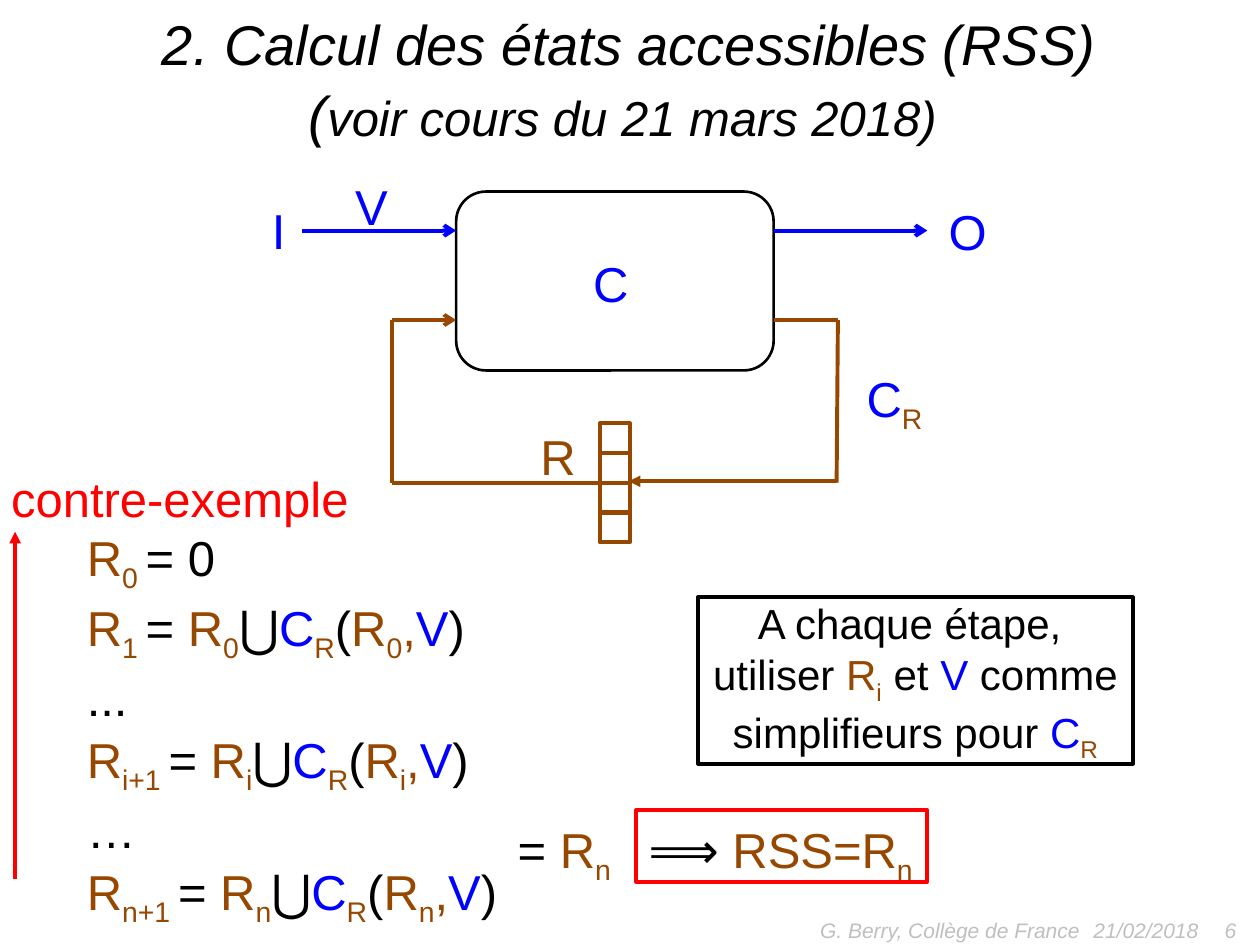
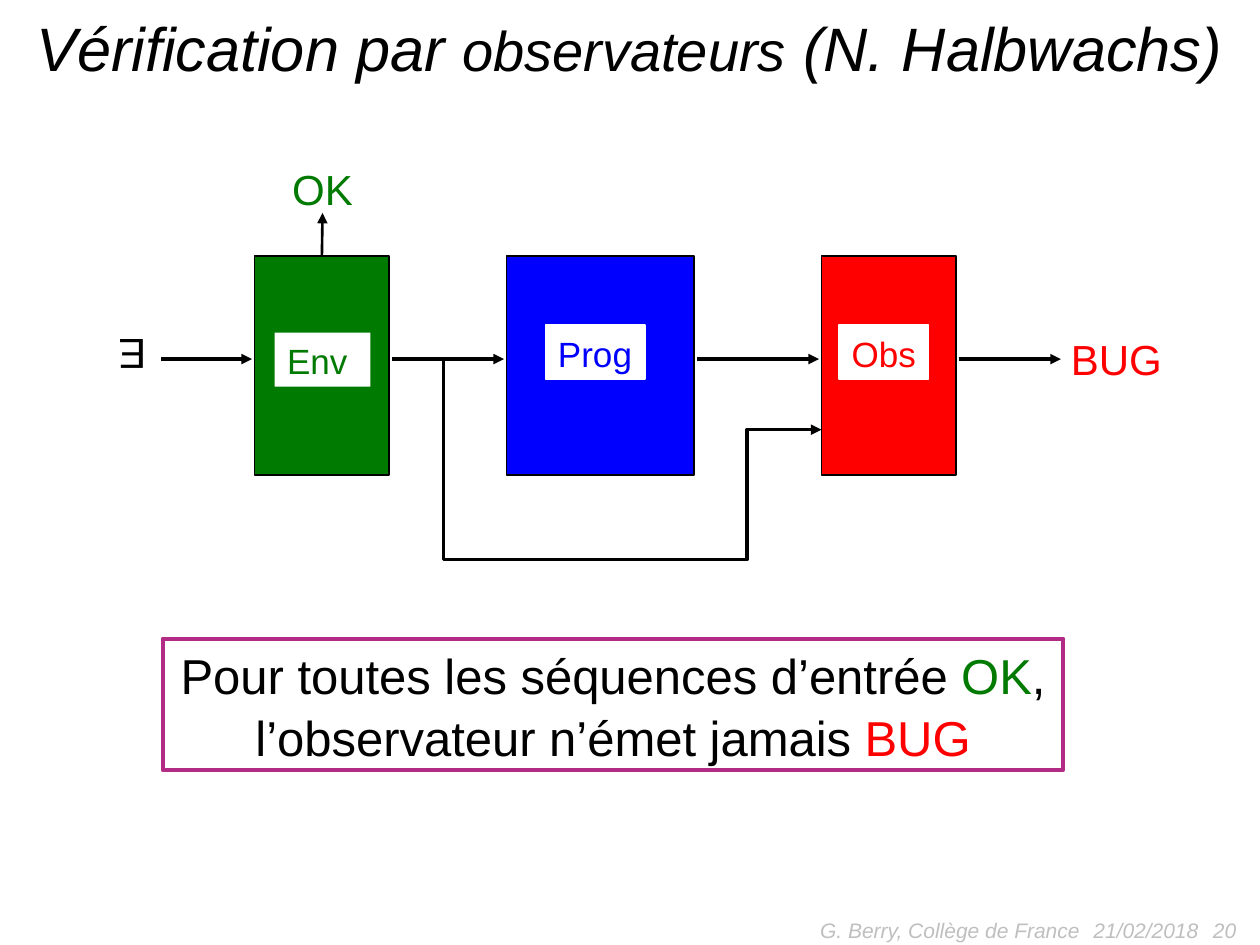
from dataclasses import dataclass
from typing import Any

from pptx import Presentation
from pptx.dml.color import RGBColor
from pptx.enum.shapes import MSO_CONNECTOR, MSO_SHAPE
from pptx.enum.text import MSO_ANCHOR, MSO_AUTO_SIZE, PP_ALIGN
from pptx.oxml.ns import qn
from pptx.util import Inches, Pt
from lxml.etree import SubElement

BLACK = RGBColor(0x00, 0x00, 0x00)
WHITE = RGBColor(0xFF, 0xFF, 0xFF)
GRAY = RGBColor(0xBF, 0xBF, 0xBF)
BROWN = RGBColor(0x96, 0x47, 0x00)
BLUE = RGBColor(0x00, 0x00, 0xFF)
RED = RGBColor(0xFF, 0x00, 0x00)
GREEN = RGBColor(0x00, 0x7A, 0x00)
PURPLE = RGBColor(0xB2, 0x2C, 0x85)
FONT = "Arial"
LINE_SPACING = 1.05


def write_lines(frame, lines, size, align=PP_ALIGN.LEFT, spacing=LINE_SPACING, italic=False):
    for index, spans in enumerate(lines):
        para = frame.paragraphs[0] if index == 0 else frame.add_paragraph()
        para.alignment = align
        para.line_spacing = spacing
        para.font.name = FONT
        para.font.size = Pt(size)
        para.font.italic = italic
        colours = {colour for _, colour, *_ in spans}
        if len(colours) == 1:
            para.font.color.rgb = spans[0][1]
        for text, colour, *subscript in spans:
            span = para.add_run()
            span.text = text
            if len(colours) > 1:
                span.font.color.rgb = colour
            if subscript:
                span._r.get_or_add_rPr().set("baseline", "-25000")


def style_line(shape, colour, width, head=None):
    shape.line.color.rgb = colour
    shape.line.width = Pt(width)
    if head:
        outline = shape._element.spPr.find(qn("a:ln"))
        SubElement(outline, qn("a:tailEnd"), type=head)


@dataclass
class Region:
    shapes: Any
    left: float = 0
    top: float = 0

    def point(self, x, y):
        return Inches(self.left + x), Inches(self.top + y)

    def text(self, x, y, width, height, lines, size, **style):
        box = self.shapes.add_textbox(*self.point(x, y), Inches(width), Inches(height))
        box.text_frame.word_wrap = False
        write_lines(box.text_frame, lines, size, **style)
        return box

    def box(self, x, y, width, height, fill=None, line=None, weight=1.0,
            kind=MSO_SHAPE.RECTANGLE):
        box = self.shapes.add_shape(kind, *self.point(x, y), Inches(width), Inches(height))
        box.shadow.inherit = False
        if fill is None:
            box.fill.background()
        else:
            box.fill.solid()
            box.fill.fore_color.rgb = fill
        if line is None:
            box.line.fill.background()
        else:
            style_line(box, line, weight)
        box.text_frame.word_wrap = False
        return box

    def line(self, start, end, colour, width=2.25, head=None):
        line = self.shapes.add_connector(
            MSO_CONNECTOR.STRAIGHT, *self.point(*start), *self.point(*end))
        style_line(line, colour, width, head)
        SubElement(line._element.spPr, qn("a:effectLst"))
        return line


def add_page(deck, number, title_height):
    page = deck.slides.add_slide(deck.slide_layouts[5])
    title = page.shapes.title
    title.left, title.top = Inches(0.12), Inches(0)
    title.width, title.height = Inches(9.75), Inches(title_height)
    title.text_frame.vertical_anchor = MSO_ANCHOR.TOP
    title.text_frame.auto_size = MSO_AUTO_SIZE.NONE
    add_footer(Region(page.shapes, 5.5, 7.18), number)
    return page


def add_footer(region, number):
    for x, width, text, align in [
        (3.08, 2.33, "21/02/2018", PP_ALIGN.LEFT),
        (2.08, 2.33, number, PP_ALIGN.RIGHT),
        (0, 3.17, "G. Berry, Collège de France", PP_ALIGN.RIGHT),
    ]:
        box = region.text(x, 0, width, 0.4, [[(text, GRAY)]], 12,
                          align=align, spacing=1.0, italic=True)
        box.text_frame.word_wrap = True
        box.text_frame.vertical_anchor = MSO_ANCHOR.MIDDLE


def write_title(page, lines):
    para = page.shapes.title.text_frame.paragraphs[0]
    para.alignment = PP_ALIGN.CENTER
    para.line_spacing = LINE_SPACING
    para.font.name = FONT
    para.font.italic = True
    para.font.color.rgb = BLACK
    for index, spans in enumerate(lines):
        if index:
            para.add_line_break()
        for text, size in spans:
            span = para.add_run()
            span.text = text
            span.font.size = Pt(size)


def state(index):
    return [("R", BROWN), (index, BROWN, True)]


def transition():
    return [("C", BLUE), ("R", BROWN, True)]


def iteration(target, source):
    return [*state(target + " "), ("= ", BLACK), *state(source), ("⋃", BLACK),
            *transition(), ("(", BLACK), *state(source), (",", BROWN),
            ("V", BLUE), (")", BLACK)]


def add_circuit(region):
    cell = 0.24
    for row in range(4):
        region.box(2.76, 2.36 + row * 0.235, cell, cell, line=BROWN, weight=2.25)
    region.box(1.62, 0.52, 2.52, 1.42, line=BLACK, weight=1.5,
               kind=MSO_SHAPE.ROUNDED_RECTANGLE)
    for start, end, colour, head in [
        ((2.76, 2.83), (1.11, 2.83), BROWN, None),
        ((1.11, 1.54), (1.11, 2.83), BROWN, None),
        ((4.65, 1.54), (4.64, 2.83), BROWN, None),
        ((1.11, 1.54), (1.62, 1.54), BROWN, "arrow"),
        ((4.65, 1.54), (4.14, 1.54), BROWN, None),
        ((0.4, 0.83), (1.62, 0.83), BLUE, "arrow"),
        ((4.14, 0.83), (5.36, 0.83), BLUE, "arrow"),
        ((4.64, 2.82), (2.99, 2.82), BROWN, "triangle"),
    ]:
        region.line(start, end, colour, head=head)
    for x, y, width, spans in [
        (2.61, 0.94, 0.48, [("C", BLUE)]),
        (0.06, 0.52, 0.31, [("I", BLUE)]),
        (5.43, 0.53, 0.51, [("O", BLUE)]),
        (4.78, 1.85, 0.68, transition()),
        (2.19, 2.31, 0.49, [("R", BROWN)]),
        (0.72, 0.33, 0.46, [("V", BLUE)]),
    ]:
        region.text(x, y, width, 0.57, [spans], 28)


def add_iterations(region):
    region.text(0.6, 0.46, 3.61, 2.93, [
        [*state("0 "), ("= 0", BLACK)],
        iteration("1", "0"),
        [("...", BLACK)],
        iteration("i+1", "i"),
        [("…", BLACK)],
        iteration("n+1", "n"),
    ], 28)
    region.text(4.02, 2.78, 1.04, 0.57, [[("= ", BLACK), *state("n")]], 28)
    result = region.box(5.06, 2.78, 2.31, 0.57, line=RED, weight=2.25)
    result.text_frame.vertical_anchor = MSO_ANCHOR.TOP
    write_lines(result.text_frame,
                [[("⟹", BLACK), (" RSS=", BROWN), *state("n")]], 28)
    region.line((0.13, 3.33), (0.13, 0.57), RED, head="triangle")
    region.text(0, 0, 2.92, 0.57, [[("contre-exemple", RED)]], 28)


def add_advice(region):
    box = region.box(0, 0, 3.45, 1.32, line=BLACK, weight=2.25)
    write_lines(box.text_frame, [
        [("A chaque étape, ", BLACK)],
        [("utiliser ", BLACK), *state("i"), (" et ", BLACK), ("V", BLUE),
         (" comme", BLACK)],
        [("simplifieurs pour ", BLACK), *transition()],
    ], 24, align=PP_ALIGN.CENTER, spacing=1.01)


def add_reachability_page(deck):
    page = add_page(deck, "6", 1.18)
    write_title(page, [[("2. Calcul des états accessibles (RSS)", 32)],
                       [("(", 32), ("voir cours du 21 mars 2018) ", 28)]])
    add_advice(Region(page.shapes, 5.54, 4.74))
    add_iterations(Region(page.shapes, -0.01, 3.65))
    add_circuit(Region(page.shapes.add_group_shape().shapes, 2, 1))


def add_observer_chain(region):
    blocks = [
        region.box(x, 0.8, width, 1.74, fill=fill, line=BLACK)
        for x, width, fill in [(1.18, 1.07, GREEN), (3.18, 1.49, BLUE), (5.68, 1.07, RED)]
    ]
    for start, end in [(0.44, 1.16), (2.27, 3.16), (4.69, 5.66), (6.77, 7.58)]:
        region.line((start, 1.62), (end, 1.62), BLACK, 2, "triangle")

    builder = region.shapes.build_freeform(*region.point(2.68, 1.62))
    builder.add_line_segments(
        [region.point(*corner) for corner in
         [(2.68, 3.21), (5.09, 3.21), (5.09, 2.18), (5.68, 2.18)]], close=False)
    bypass = builder.convert_to_shape()
    bypass.shadow.inherit = False
    bypass.fill.background()
    style_line(bypass, BLACK, 2, "triangle")

    for x, y, width, name, colour, line in [
        (1.34, 1.41, 0.76, "Env", GREEN, None),
        (3.49, 1.35, 0.79, "Prog", BLUE, WHITE),
        (5.82, 1.35, 0.71, "Obs", RED, WHITE),
    ]:
        label = region.box(x, y, width, 0.43, fill=WHITE, line=line)
        write_lines(label.text_frame, [[(name, colour)]], 20)

    exists = region.text(0, 1.37, 0.42, 0.5, [[("E", BLACK)]], 24)
    exists.rotation = 180
    region.text(7.56, 1.35, 0.95, 0.5, [[("BUG", RED)]], 24)
    ok_arrow = region.line((1.72, 0.8), (1.72, 0.46), BLACK, 1.5, "triangle")
    ok_arrow.begin_connect(blocks[0], 0)
    region.text(1.38, 0, 0.69, 0.5, [[("OK", GREEN)]], 24)


def add_property(region):
    box = region.box(0, 0, 7.15, 1.04, line=PURPLE, weight=2.25)
    write_lines(box.text_frame, [
        [("Pour toutes les séquences d’entrée ", BLACK), ("OK", GREEN), (",", BLACK)],
        [("l’observateur n’émet jamais ", BLACK), ("BUG", RED)],
    ], 28, align=PP_ALIGN.CENTER)


def add_observer_page(deck):
    page = add_page(deck, "20", 0.69)
    write_title(page, [[("Vérification par ", 35), ("observateurs", 32),
                        (" (N. Halbwachs)", 35)]])
    add_observer_chain(Region(page.shapes, 0.84, 1.23))
    add_property(Region(page.shapes, 1.29, 5.07))


def main():
    deck = Presentation()
    deck.slide_width, deck.slide_height = Inches(10), Inches(7.5)
    add_reachability_page(deck)
    add_observer_page(deck)
    deck.save("out.pptx")


if __name__ == "__main__":
    main()
